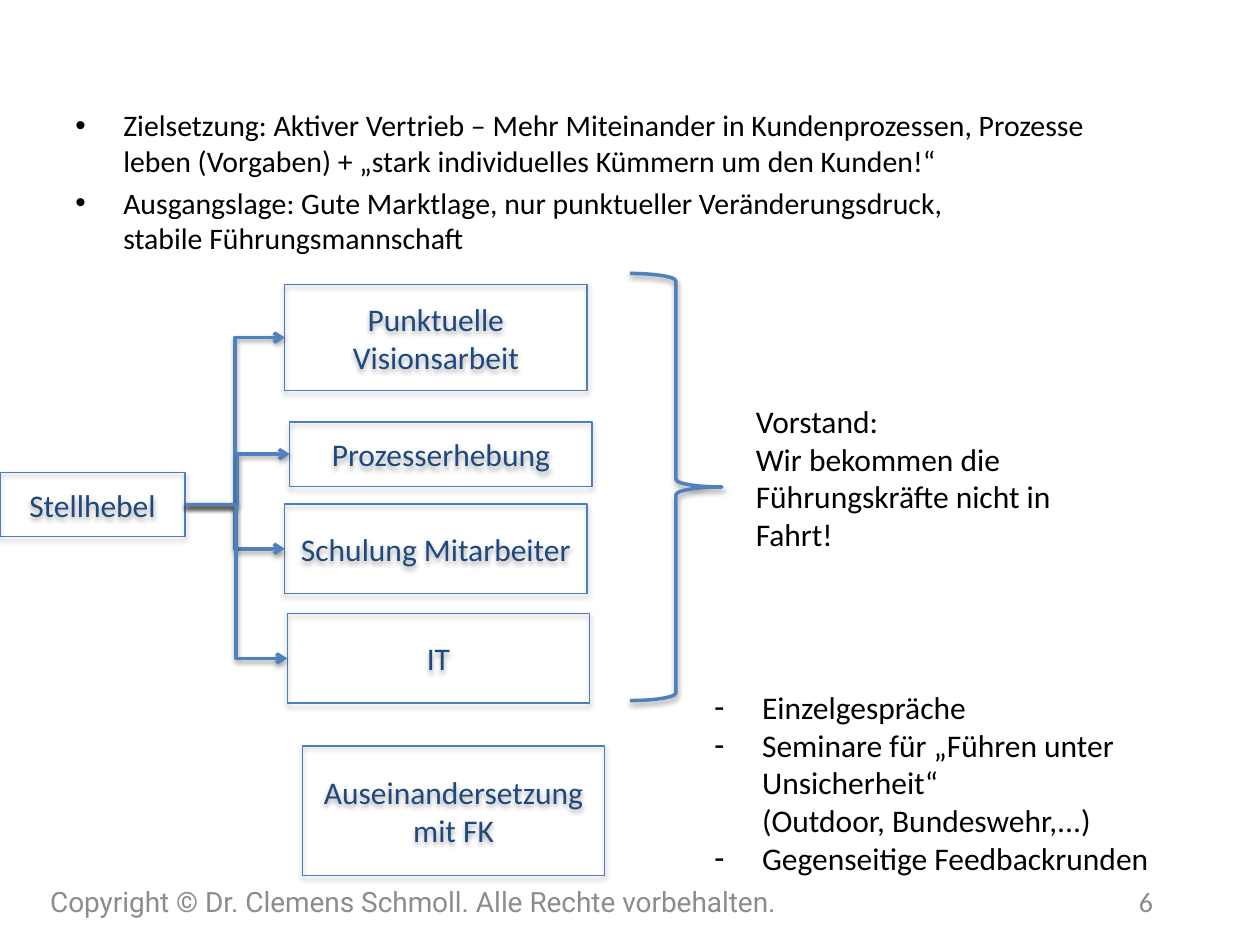
from dataclasses import dataclass

from lxml.etree import SubElement
from pptx import Presentation
from pptx.dml.color import RGBColor as Rgb
from pptx.enum.shapes import MSO_CONNECTOR as Conn, MSO_SHAPE as Form
from pptx.enum.text import MSO_ANCHOR as Anchor, PP_ALIGN as Align
from pptx.oxml.ns import qn
from pptx.util import Inches, Pt

HUES = {"ink": "000000", "navy": "1F497D", "edge": "4B7EBC",
        "link": "4F81BD", "gray": "8C8C8C", "shade": "000000"}
FONT = "Calibri"


@dataclass
class Box:
    text: str
    left: float
    top: float
    width: float
    height: float


@dataclass
class Note:
    lines: list
    area: tuple
    style: dict


ROOT = Box("Stellhebel", 0, 3.75, 1.47, 0.51)
LEVERS = [
    Box("Punktuelle Visionsarbeit", 2.26, 2.26, 2.4, 0.84),
    Box("Prozesserhebung", 2.3, 3.35, 2.4, 0.51),
    Box("Schulung Mitarbeiter", 2.26, 4, 2.4, 0.71),
    Box("IT", 2.28, 4.87, 2.4, 0.71),
]
CLASH = Box("Auseinandersetzung mit FK", 2.4, 5.92, 2.4, 1.03)

NOTES = [
    Note(["Zielsetzung: Aktiver Vertrieb – Mehr Miteinander in Kundenprozessen, "
          "Prozesse leben (Vorgaben) + „stark individuelles Kümmern um den Kunden!“",
          "Ausgangslage: Gute Marktlage, nur punktueller Veränderungsdruck, \n"
          "stabile Führungsmannschaft"],
         (0.5, 0.8, 8.75, 4.64), {"size": 17, "mark": "•", "gap": 3.4}),
    Note(["Vorstand:", "Wir bekommen die", "Führungskräfte nicht in\nFahrt!"],
         (5.9, 3.14, 3.3, 1.51), {"wrap": False}),
    Note(["Einzelgespräche",
          "Seminare für „Führen unter\nUnsicherheit“ \n(Outdoor, Bundeswehr,...)",
          "Gegenseitige Feedbackrunden"],
         (5.57, 5.41, 4.48, 1.87), {"mark": "-", "wrap": False}),
    Note(["Copyright © Dr. Clemens Schmoll. Alle Rechte vorbehalten."],
         (0.3, 6.95, 6.36, 0.4),
         {"size": 16, "hue": "gray", "font": "Roboto", "anchor": Anchor.MIDDLE}),
    Note(["6"], (6.92, 6.95, 2.33, 0.4),
         {"size": 16, "hue": "gray", "align": Align.RIGHT, "anchor": Anchor.MIDDLE}),
]


def color(name: str) -> Rgb:
    """Return the named colour."""
    return Rgb.from_string(HUES[name])


def write(frame, lines: list, *, size: float = 18, hue: str = "ink",
          font: str = FONT, align=Align.LEFT, anchor=Anchor.TOP,
          mark: str = "", gap: float = 0, wrap: bool = True) -> None:
    """Fill a text frame with formatted paragraphs."""
    frame.word_wrap = wrap
    frame.vertical_anchor = anchor
    for i, line in enumerate(lines):
        para = frame.add_paragraph() if i else frame.paragraphs[0]
        para.text = line
        para.alignment = align
        para.space_before = Pt(gap if i else 0)
        if mark:
            props = para._p.get_or_add_pPr()
            props.set("marL", str(Inches(0.38)))
            props.set("indent", str(Inches(-0.38)))
            SubElement(props, qn("a:buFont"), typeface="Arial")
            SubElement(props, qn("a:buChar"), char=mark)
        for run in para.runs:
            run.font.size = Pt(size)
            run.font.name = font
            run.font.color.rgb = color(hue)


def stroke(item, hue: str, width: float) -> None:
    """Set the line of a shape or connector."""
    item.line.color.rgb = color(hue)
    item.line.width = Pt(width)


def shade(item, alpha: int, dist: float) -> None:
    """Add a soft shadow that falls straight down."""
    props = item._element.spPr
    fx = SubElement(props, qn("a:effectLst"))
    drop = SubElement(fx, qn("a:outerShdw"), blurRad=str(Pt(3.1)),
                      dist=str(Pt(dist)), dir="5400000", rotWithShape="0")
    tint = SubElement(drop, qn("a:srgbClr"), val=HUES["shade"])
    SubElement(tint, qn("a:alpha"), val=str(alpha * 1000))


def draw_box(slide, box: Box):
    """Draw an outlined box with centred text."""
    area = (box.left, box.top, box.width, box.height)
    shape = slide.shapes.add_shape(Form.RECTANGLE, *map(Inches, area))
    shape.fill.background()
    stroke(shape, "edge", 0.75)
    shade(shape, 35, 1.8)
    frame = shape.text_frame
    frame.margin_left = frame.margin_right = Inches(0.11)
    frame.margin_top = frame.margin_bottom = Inches(0.06)
    write(frame, [box.text], hue="navy", align=Align.CENTER, anchor=Anchor.MIDDLE)
    return shape


def draw_link(slide, start, end) -> None:
    """Join two boxes with a bent arrow."""
    link = slide.shapes.add_connector(Conn.ELBOW, 0, 0, 0, 0)
    link.begin_connect(start, 3)
    link.end_connect(end, 1)
    stroke(link, "link", 2)
    SubElement(link.line._get_or_add_ln(), qn("a:tailEnd"), type="arrow")
    shade(link, 38, 1.6)


def draw_brace(slide) -> None:
    """Draw the brace that sums up the levers."""
    brace = slide.shapes.add_shape(Form.RIGHT_BRACE, *map(Inches, (5, 2.17, 0.73, 3.39)))
    brace.fill.background()
    stroke(brace, "link", 2)
    shade(brace, 38, 1.6)


def draw_note(slide, note: Note) -> None:
    """Draw a plain text box."""
    box = slide.shapes.add_textbox(*map(Inches, note.area))
    write(box.text_frame, note.lines, **note.style)


def main() -> None:
    """Build the slide and save it."""
    deck = Presentation()
    deck.slide_width, deck.slide_height = Inches(10), Inches(7.5)
    slide = deck.slides.add_slide(deck.slide_layouts[6])
    root = draw_box(slide, ROOT)
    levers = [draw_box(slide, box) for box in LEVERS]
    for lever in levers:
        draw_link(slide, root, lever)
    draw_brace(slide)
    draw_box(slide, CLASH)
    for note in NOTES:
        draw_note(slide, note)
    deck.save("out.pptx")


if __name__ == "__main__":
    main()
